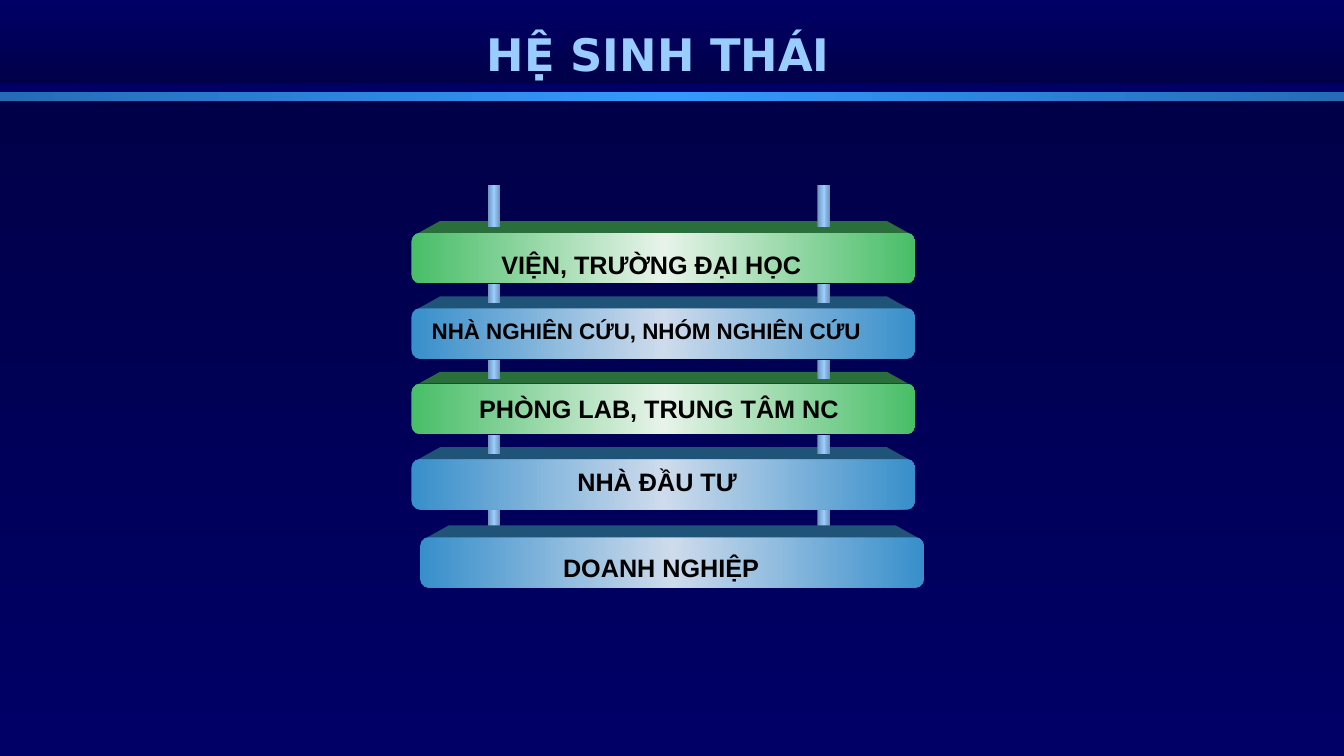
from dataclasses import dataclass

from lxml.etree import SubElement
from pptx import Presentation
from pptx.dml.color import RGBColor
from pptx.enum.shapes import MSO_SHAPE as Preset
from pptx.enum.text import MSO_ANCHOR as Anchor, MSO_AUTO_SIZE as AutoSize, PP_ALIGN as Align
from pptx.oxml.ns import qn
from pptx.shapes.autoshape import Shape
from pptx.slide import Slide
from pptx.text.text import TextFrame
from pptx.util import Cm, Pt

WIDTH, HEIGHT = 33.87, 19.05
BAR_WIDTH, BAR_HEIGHT, BAR_LEFT, BAR_TOP, PITCH = 12.7, 1.27, 10.37, 5.87, 1.9
LID_HEIGHT, LID_BASE_INSET, LID_TOP_INSET = 0.3, 0.18, 0.72
ROD_WIDTH, ROD_LEFTS = 0.32, (12.29, 20.6)
ROD_COLORS = ["6D92B6", "99CCFF", "6D92B6"]


@dataclass(frozen=True)
class Palette:
    edge: str
    middle: str
    lid: str


@dataclass(frozen=True)
class Band:
    top: float
    height: float
    colors: list[str]
    angle: int


@dataclass(frozen=True)
class Layer:
    text: str
    palette: Palette
    left: float
    top: float
    label: tuple[float, float, float, float]
    size: int = 18


GREEN = Palette("48BE67", "E7F3E9", "2A6F3B")
BLUE = Palette("378FCB", "CEDBEC", "1F5478")

BANDS = [
    Band(0, 2.13, ["000066", "000049"], 270),
    Band(2.51, 16.54, ["000049", "000066"], 270),
    Band(2.33, 0.21, ["246DB6", "3399FF", "246DB6"], 0),
]
LAYERS = [
    Layer("VIỆN, TRƯỜNG ĐẠI HỌC", GREEN, BAR_LEFT, BAR_TOP, (12.07, 6.15, 8.69, 1.02)),
    Layer("NHÀ NGHIÊN CỨU, NHÓM NGHIÊN CỨU", BLUE, BAR_LEFT, BAR_TOP + PITCH,
          (10.36, 7.87, 11.86, 0.94), 16),
    Layer("PHÒNG LAB, TRUNG TÂM NC", GREEN, BAR_LEFT, BAR_TOP + 2 * PITCH,
          (10.36, 9.78, 12.5, 1.02)),
    Layer("NHÀ ĐẦU TƯ", BLUE, BAR_LEFT, BAR_TOP + 3 * PITCH, (12.9, 11.63, 7.32, 1.02)),
    Layer("DOANH NGHIỆP", BLUE, 10.59, 13.54, (13.0, 13.79, 7.32, 1.02)),
]


def rgb(color: str) -> RGBColor:
    return RGBColor.from_string(color)


def fill_gradient(shape: Shape, colors: list[str], angle: int = 0) -> None:
    """Spread the colours evenly along the gradient."""
    shape.fill.gradient()
    shape.fill.gradient_angle = angle
    stops = shape.element.spPr.find(qn("a:gradFill")).find(qn("a:gsLst"))
    for stop in list(stops):
        stops.remove(stop)
    for index, color in enumerate(colors):
        position = 100000 * index // (len(colors) - 1)
        stop = SubElement(stops, qn("a:gs"), pos=str(position))
        SubElement(stop, qn("a:srgbClr"), val=color)


def add_block(slide: Slide, preset: Preset, left: float, top: float, width: float,
              height: float, colors: list[str], angle: int = 0) -> Shape:
    block = slide.shapes.add_shape(preset, Cm(left), Cm(top), Cm(width), Cm(height))
    block.shadow.inherit = False
    block.line.fill.background()
    fill_gradient(block, colors, angle)
    return block


def write(frame: TextFrame, text: str, *, size: int, color: str, font: str) -> None:
    frame.word_wrap = True
    para = frame.paragraphs[0]
    para.alignment = Align.CENTER
    span = para.add_run()
    span.text = text
    span.font.size = Pt(size)
    span.font.bold = True
    span.font.name = font
    span.font.color.rgb = rgb(color)


def add_layer(slide: Slide, layer: Layer) -> None:
    palette = layer.palette
    bar = add_block(slide, Preset.ROUNDED_RECTANGLE, layer.left, layer.top, BAR_WIDTH,
                    BAR_HEIGHT, [palette.edge, palette.middle, palette.edge])
    bar.adjustments[0] = 0.167

    # Slanted lid above the bar
    right, lid_top = layer.left + BAR_WIDTH, layer.top - LID_HEIGHT
    outline = slide.shapes.build_freeform(Cm(layer.left + LID_BASE_INSET), Cm(layer.top))
    outline.add_line_segments([
        (Cm(layer.left + LID_TOP_INSET), Cm(lid_top)),
        (Cm(right - LID_TOP_INSET), Cm(lid_top)),
        (Cm(right - LID_BASE_INSET), Cm(layer.top)),
    ])
    lid = outline.convert_to_shape()
    lid.shadow.inherit = False
    lid.fill.solid()
    lid.fill.fore_color.rgb = rgb(palette.lid)
    lid.line.fill.background()

    box = slide.shapes.add_textbox(*map(Cm, layer.label))
    write(box.text_frame, layer.text, size=layer.size, color="000000", font="Arial")


def add_rods(slide: Slide) -> None:
    spans = [(4.66, 1.07)] + [(7.16 + PITCH * gap, 0.48) for gap in range(4)]
    for left in ROD_LEFTS:
        for top, height in spans:
            add_block(slide, Preset.RECTANGLE, left, top, ROD_WIDTH, height, ROD_COLORS)


def main() -> None:
    deck = Presentation()
    deck.slide_width, deck.slide_height = Cm(WIDTH), Cm(HEIGHT)
    slide = deck.slides.add_slide(deck.slide_layouts[5])
    slide.background.fill.solid()
    slide.background.fill.fore_color.rgb = rgb("000066")

    # Title
    title = slide.shapes.title
    title.left, title.top, title.width, title.height = Cm(0.84), Cm(0.43), Cm(31.9), Cm(1.85)
    title.text_frame.auto_size = AutoSize.NONE
    title.text_frame.vertical_anchor = Anchor.MIDDLE
    write(title.text_frame, "HỆ SINH THÁI ", size=32, color="99CCFF", font="DejaVu Sans")

    # Bands lie behind the title
    for band in BANDS:
        stripe = add_block(slide, Preset.RECTANGLE, 0, band.top, WIDTH, band.height,
                           band.colors, band.angle)
        title.element.addprevious(stripe.element)

    # Stack: the lowest layer covers the ends of the rods
    for layer in LAYERS[:-1]:
        add_layer(slide, layer)
    add_rods(slide)
    add_layer(slide, LAYERS[-1])

    deck.save("out.pptx")


if __name__ == "__main__":
    main()
